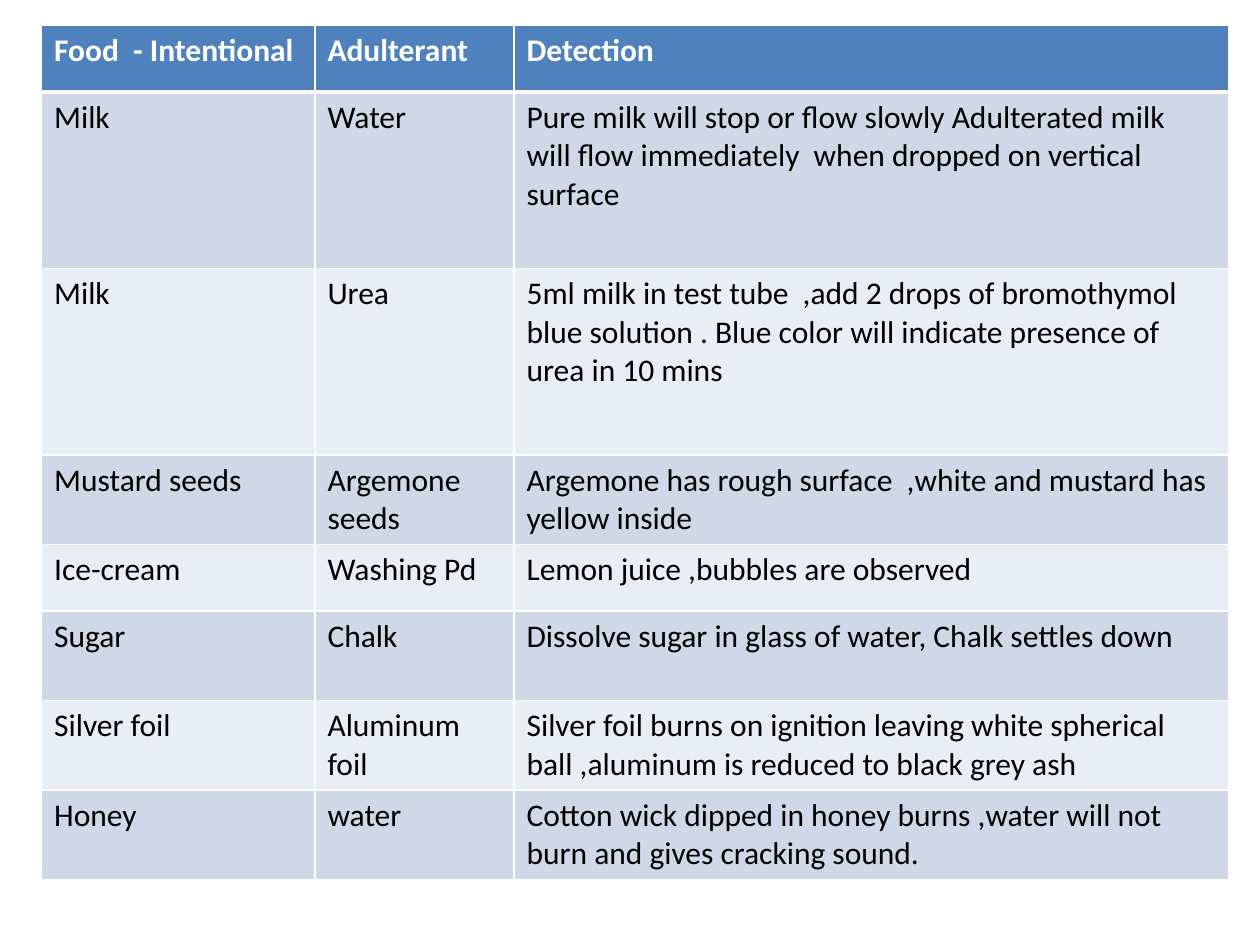
from lxml.etree import SubElement
from pptx import Presentation
from pptx.dml.color import RGBColor
from pptx.oxml.ns import qn
from pptx.util import Inches, Pt

WHITE = RGBColor(0xFF, 0xFF, 0xFF)
BLACK = RGBColor(0x00, 0x00, 0x00)
HEADER_BLUE = RGBColor(0x4F, 0x81, 0xBD)
BAND_DARK = RGBColor(0xD0, 0xD8, 0xE8)
BAND_LIGHT = RGBColor(0xE9, 0xED, 0xF4)

COLUMN_WIDTHS = [2.17, 1.58, 5.67]
ROW_HEIGHTS = [0.53, 1.4, 1.48, 0.71, 0.53, 0.71, 0.71, 0.71]
ROWS = [
    ("Food  - Intentional", "Adulterant", "Detection"),
    ("Milk", "Water",
     "Pure milk will stop or flow slowly Adulterated milk will flow "
     "immediately  when dropped on vertical surface"),
    ("Milk", "Urea",
     "5ml milk in test tube  ,add 2 drops of bromothymol blue solution . "
     "Blue color will indicate presence of urea in 10 mins"),
    ("Mustard seeds", "Argemone seeds",
     "Argemone has rough surface  ,white and mustard has yellow inside"),
    ("Ice-cream", "Washing Pd", "Lemon juice ,bubbles are observed"),
    ("Sugar", "Chalk", "Dissolve sugar in glass of water, Chalk settles down"),
    ("Silver foil", "Aluminum foil",
     "Silver foil burns on ignition leaving white spherical ball ,aluminum "
     "is reduced to black grey ash"),
    ("Honey", "water",
     "Cotton wick dipped in honey burns ,water will not burn and gives "
     "cracking sound."),
]


def set_borders(cell, top, bottom):
    """Draw white cell borders; top and bottom are widths in points."""
    properties = cell._tc.get_or_add_tcPr()
    widths = {"a:lnL": 1, "a:lnR": 1, "a:lnT": top, "a:lnB": bottom}
    for position, (tag, width) in enumerate(widths.items()):
        line = SubElement(properties, qn(tag), w=str(Pt(width)))
        fill = SubElement(line, qn("a:solidFill"))
        SubElement(fill, qn("a:srgbClr"), val=str(WHITE))
        properties.insert(position, line)  # borders come before the fill


def fill_cell(cell, text, row_index):
    is_header = row_index == 0
    cell.fill.solid()
    if is_header:
        cell.fill.fore_color.rgb = HEADER_BLUE
    else:
        cell.fill.fore_color.rgb = BAND_DARK if row_index % 2 else BAND_LIGHT
    set_borders(cell, top=3 if row_index == 1 else 1, bottom=3 if is_header else 1)

    cell.text_frame.text = text
    font = cell.text_frame.paragraphs[0].runs[0].font
    font.name = "Calibri"
    font.size = Pt(18)
    font.bold = is_header
    font.color.rgb = WHITE if is_header else BLACK


def add_adulterant_table(slide, left, top):
    table = slide.shapes.add_table(
        len(ROWS), len(COLUMN_WIDTHS), Inches(left), Inches(top),
        Inches(sum(COLUMN_WIDTHS)), Inches(sum(ROW_HEIGHTS))).table
    for column, width in zip(table.columns, COLUMN_WIDTHS):
        column.width = Inches(width)
    for row_index, (row, height) in enumerate(zip(table.rows, ROW_HEIGHTS)):
        row.height = Inches(height)
        for cell, text in zip(row.cells, ROWS[row_index]):
            fill_cell(cell, text, row_index)


def main():
    presentation = Presentation()
    presentation.slide_width = Inches(10)
    presentation.slide_height = Inches(7.5)
    slide = presentation.slides.add_slide(presentation.slide_layouts[6])
    add_adulterant_table(slide, left=0.33, top=0.2)
    presentation.save("out.pptx")


if __name__ == "__main__":
    main()
